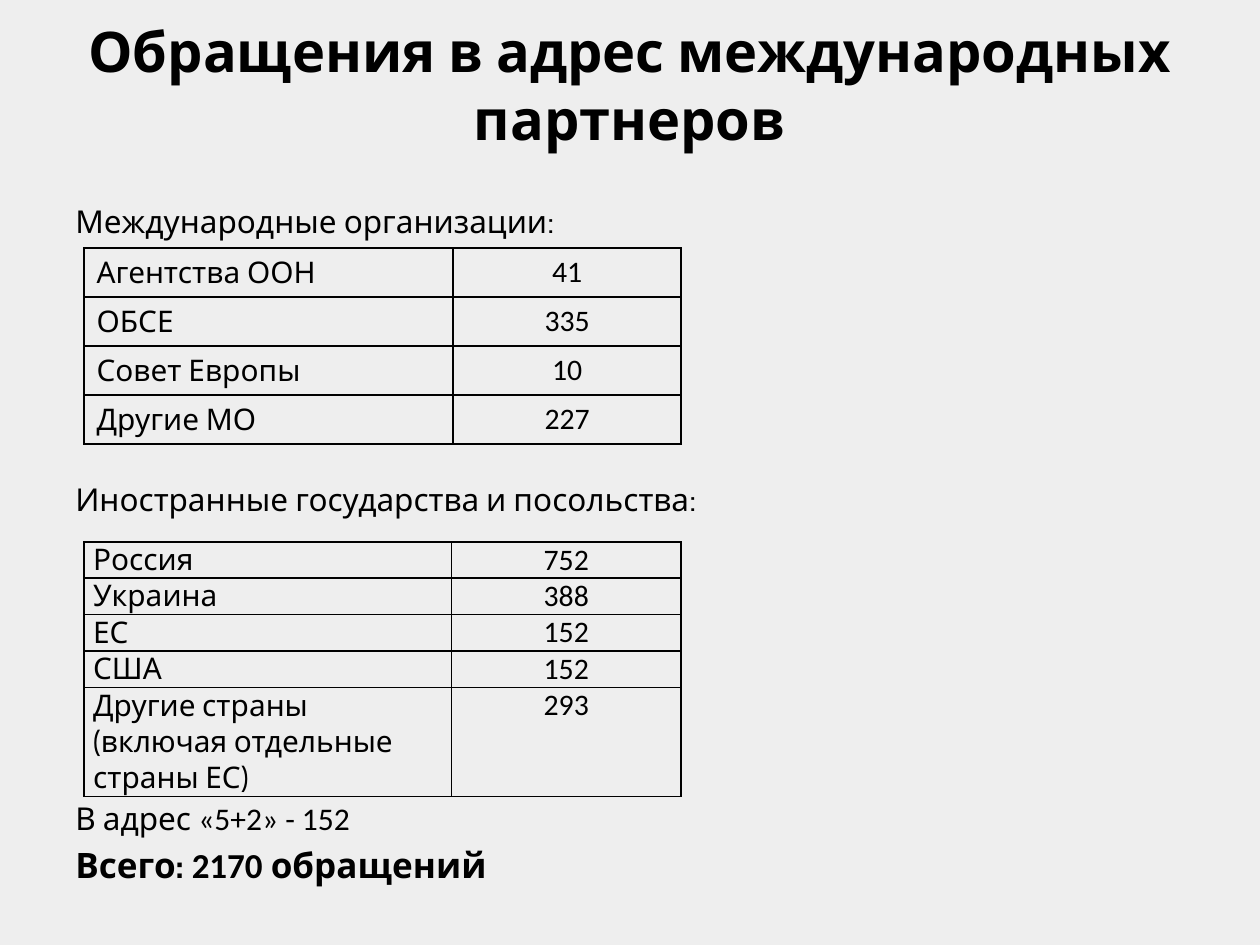
from lxml import etree
from pptx import Presentation
from pptx.dml.color import RGBColor
from pptx.enum.text import MSO_ANCHOR, PP_ALIGN
from pptx.oxml.ns import qn
from pptx.util import Pt

BLACK = RGBColor(0x00, 0x00, 0x00)
GREY = RGBColor(0xEE, 0xEE, 0xEE)
LEFT, CENTER = PP_ALIGN.LEFT, PP_ALIGN.CENTER
TOP, BOTTOM = MSO_ANCHOR.TOP, MSO_ANCHOR.BOTTOM
WORDS, DIGITS = "Cabin", "Calibri"

GROUPS = [("Агентства ООН", "41"), ("ОБСЕ", "335"),
          ("Совет Европы", "10"), ("Другие МО", "227")]
STATES = [("Россия", "752"), ("Украина", "388"), ("ЕС", "152"), ("США", "152"),
          ("Другие страны (включая отдельные страны ЕС)", "293")]

# Each line: space before, size, bold, then (text, font) runs
LINES = [
    (0, 18, False, [("Международные организации:", WORDS)]),
    (137.4, 18, False, [("Иностранные государства и посольства:", WORDS)]),
    (160.9, 18, False, [("В адрес ", WORDS), ("«5+2» - 152", DIGITS)]),
    (3.6, 20, True, [("Всего: ", WORDS), ("2170", DIGITS), (" обращений", WORDS)]),
]
TITLE = [(0, 32, True, [("Обращения в адрес международных партнеров", WORDS)])]


class Page:
    def __init__(self, deck):
        self.slide = deck.slides.add_slide(deck.slide_layouts[6])
        fill = self.slide.background.fill
        fill.solid()
        fill.fore_color.rgb = GREY

    def style(self, run, size, face, bold=False):
        font = run.font
        font.size, font.name, font.bold = Pt(size), face, bold
        font.color.rgb = BLACK

    def text(self, x, y, w, h, lines, align=LEFT, anchor=TOP):
        box = self.slide.shapes.add_textbox(Pt(x), Pt(y), Pt(w), Pt(h))
        frame = box.text_frame
        frame.word_wrap = True
        frame.vertical_anchor = anchor
        for i, (gap, size, bold, parts) in enumerate(lines):
            para = frame.add_paragraph() if i else frame.paragraphs[0]
            para.alignment = align
            para.space_before = Pt(gap)
            for words, face in parts:
                run = para.add_run()
                run.text = words
                self.style(run, size, face, bold)

    def border(self, cell):
        props = cell._tc.get_or_add_tcPr()
        for side in ("a:lnL", "a:lnR", "a:lnT", "a:lnB"):
            line = etree.SubElement(props, qn(side), w=str(Pt(1)))
            fill = etree.SubElement(line, qn("a:solidFill"))
            etree.SubElement(fill, qn("a:srgbClr"), val=str(BLACK))

    def table(self, x, y, cols, rows, data, pad_x, pad_y):
        grid = self.slide.shapes.add_table(
            len(rows), len(cols), Pt(x), Pt(y), Pt(sum(cols)), Pt(sum(rows))).table
        grid.first_row = grid.horz_banding = False
        for col, wide in zip(grid.columns, cols):
            col.width = Pt(wide)
        for row, high, values in zip(grid.rows, rows, data):
            row.height = Pt(high)
            looks = ((WORDS, LEFT), (DIGITS, CENTER))
            for cell, value, (face, align) in zip(row.cells, values, looks):
                self.border(cell)
                cell.fill.background()
                cell.margin_left = cell.margin_right = Pt(pad_x)
                cell.margin_top = cell.margin_bottom = Pt(pad_y)
                cell.text = value
                para = cell.text_frame.paragraphs[0]
                para.alignment = align
                self.style(para.runs[0], 17, face)


def main():
    deck = Presentation()
    deck.slide_width, deck.slide_height = Pt(720), Pt(540)
    page = Page(deck)
    page.text(36, 111.6, 648, 370.8, LINES)
    page.text(36, 0, 648, 90, TITLE, CENTER, BOTTOM)
    page.table(48, 141.8, [211, 130.3], [28] * 4, GROUPS, 7.2, 3.6)
    page.table(48, 309.6, [210, 131.3], [20.8] * 4 + [62.4], STATES, 5.2, 0)
    deck.save("out.pptx")


if __name__ == "__main__":
    main()
